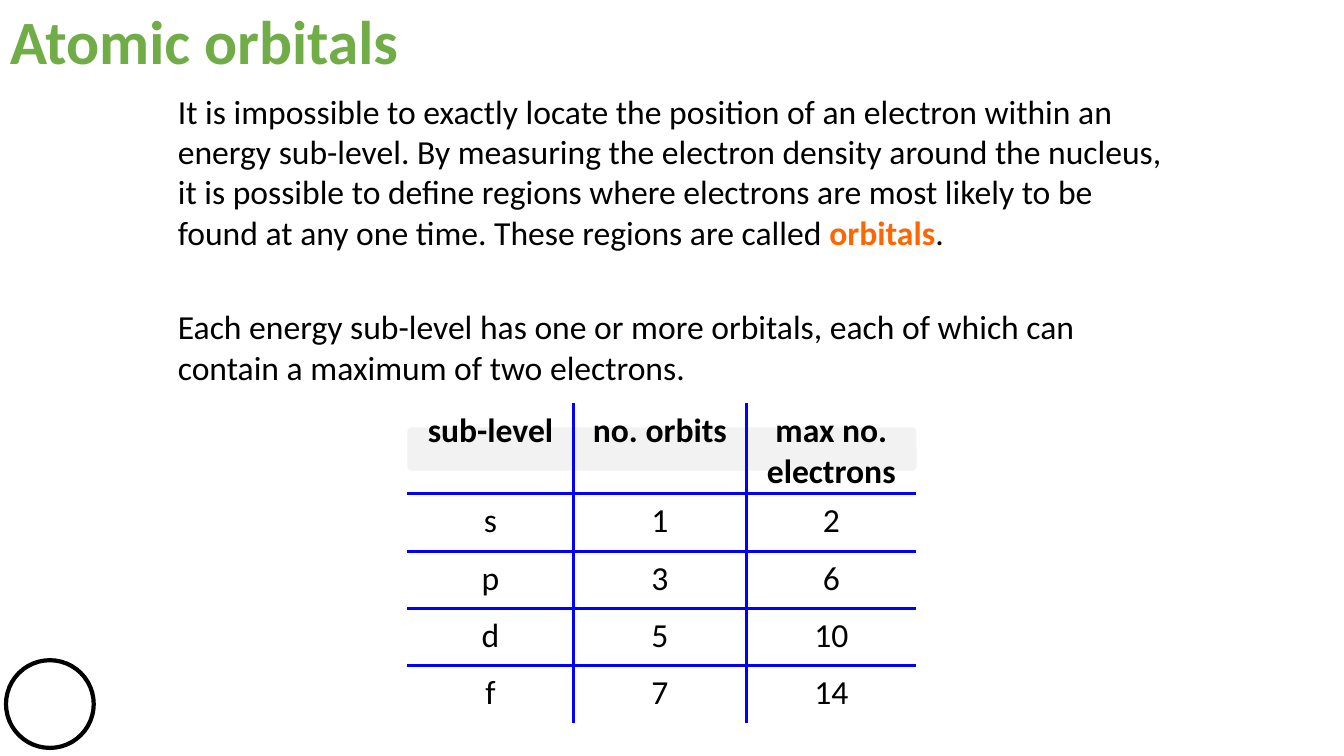
from dataclasses import dataclass
from itertools import accumulate

from lxml import etree
from pptx import Presentation
from pptx import util as u
from pptx.dml.color import RGBColor
from pptx.enum import shapes, text
from pptx.oxml import ns


@dataclass(frozen=True)
class Theme:
    """Colours, type sizes and line widths of the slide."""
    font: str = "Calibri"
    ink: str = "000000"
    paper: str = "FFFFFF"
    heading: str = "70AD47"
    accent: str = "FF6600"
    band: str = "F2F2F2"
    rule: str = "0000FF"
    title_size: int = 44
    body_size: int = 24
    rule_width: float = 2.25
    ring_width: float = 3


THEME = Theme()
WIDTH, HEIGHT = 13.33, 7.5
COLUMN_WIDTHS = (1.65, 1.71, 1.69)
ROWS = (
    ("sub-level", "no. orbits", "max no.\nelectrons"),
    ("s", "1", "2"),
    ("p", "3", "6"),
    ("d", "5", "10"),
    ("f", "7", "14"),
)
BODY_COUNT = len(ROWS) - 1
ROW_HEIGHTS = (0.9,) + (2.27 / BODY_COUNT,) * BODY_COUNT


def inches(*lengths):
    """Turn lengths in inches into slide units."""
    return [u.Inches(length) for length in lengths]


def write(paragraph, wording, size=THEME.body_size, color=THEME.ink, bold=False):
    """Append formatted text to a paragraph, breaking lines at newlines."""
    for index, line in enumerate(wording.split("\n")):
        if index:
            paragraph.add_line_break()
        run = paragraph.add_run()
        run.text = line
        run.font.name = THEME.font
        run.font.size = u.Pt(size)
        run.font.bold = bold
        run.font.color.rgb = RGBColor.from_string(color)


def text_box(slide, box):
    """Add a wrapping text box and return its frame."""
    frame = slide.shapes.add_textbox(*inches(*box)).text_frame
    frame.word_wrap = True
    return frame


def plain_shape(slide, kind, box, fill):
    """Add a filled shape with neither shadow nor outline."""
    shape = slide.shapes.add_shape(kind, *inches(*box))
    shape.shadow.inherit = False
    shape.fill.solid()
    shape.fill.fore_color.rgb = RGBColor.from_string(fill)
    shape.line.fill.background()
    return shape


def add_rule(slide, start_x, start_y, end_x, end_y):
    """Draw one table rule without a shadow."""
    rule = slide.shapes.add_connector(
        shapes.MSO_CONNECTOR.STRAIGHT, *inches(start_x, start_y, end_x, end_y))
    rule.line.color.rgb = RGBColor.from_string(THEME.rule)
    rule.line.width = u.Pt(THEME.rule_width)
    etree.SubElement(rule._element.spPr, ns.qn("a:effectLst"))


def add_title(slide, box):
    """Place the slide heading."""
    frame = text_box(slide, box)
    frame.vertical_anchor = text.MSO_ANCHOR.MIDDLE
    paragraph = frame.paragraphs[0]
    paragraph.line_spacing = 0.9
    write(paragraph, "Atomic orbitals", size=THEME.title_size,
          color=THEME.heading, bold=True)


def add_statement(slide, box, wording, key_term="", ending=""):
    """Place a body statement, with an optional highlighted term."""
    paragraph = text_box(slide, box).paragraphs[0]
    write(paragraph, wording)
    if key_term:
        write(paragraph, key_term, color=THEME.accent, bold=True)
        write(paragraph, ending)


def add_ring(slide, box):
    """Place the outlined circle in the corner."""
    ring = plain_shape(slide, shapes.MSO_SHAPE.OVAL, box, THEME.paper)
    ring.line.color.rgb = RGBColor.from_string(THEME.ink)
    ring.line.width = u.Pt(THEME.ring_width)


def clear_cell(cell):
    """Remove the borders and fill of a cell."""
    properties = cell._tc.get_or_add_tcPr()
    for side in "LRTB":
        border = etree.SubElement(properties, ns.qn(f"a:ln{side}"), w="0")
        etree.SubElement(border, ns.qn("a:noFill"))
    cell.fill.background()


def add_orbital_table(slide, left, top):
    """Place the sub-level table and its rules over the pale header band."""
    width, height = sum(COLUMN_WIDTHS), sum(ROW_HEIGHTS)
    band = plain_shape(slide, shapes.MSO_SHAPE.ROUNDED_RECTANGLE,
                       (left, top + 0.24, width, 0.43), THEME.band)
    band.adjustments[0] = 0.1

    for offset in accumulate(ROW_HEIGHTS[:-1]):
        add_rule(slide, left, top + offset, left + width, top + offset)
    for offset in accumulate(COLUMN_WIDTHS[:-1]):
        add_rule(slide, left + offset, top, left + offset, top + height)

    table = slide.shapes.add_table(
        len(ROWS), len(COLUMN_WIDTHS), *inches(left, top, width, height)).table
    table.first_row = table.horz_banding = False
    for column, column_width in zip(table.columns, COLUMN_WIDTHS):
        column.width = u.Inches(column_width)
    for row_index, values in enumerate(ROWS):
        is_header = row_index == 0
        row = table.rows[row_index]
        row.height = u.Inches(ROW_HEIGHTS[row_index])
        for cell, value in zip(row.cells, values):
            clear_cell(cell)
            cell.margin_top, cell.margin_bottom = inches(0.07, 0)
            paragraph = cell.text_frame.paragraphs[0]
            paragraph.alignment = text.PP_ALIGN.CENTER
            write(paragraph, value, bold=is_header)


def build_orbitals_slide(presentation):
    """Compose the atomic orbitals slide."""
    slide = presentation.slides.add_slide(presentation.slide_layouts[6])
    margin, measure = WIDTH / 8, WIDTH * 0.75
    add_ring(slide, (0.06, HEIGHT - 0.95, 0.87, 0.87))
    add_title(slide, (0, 0, measure, 0.89))
    add_statement(
        slide, (margin, 0.85, measure, 1.72),
        "It is impossible to exactly locate the position of an electron within "
        "an energy sub-level. By measuring the electron density around the "
        "nucleus, it is possible to define regions where electrons are most "
        "likely to be found at any one time. These regions are called ",
        key_term="orbitals", ending=".")
    add_statement(
        slide, (margin, 2.99, measure, 0.91),
        "Each energy sub-level has one or more orbitals, each of which can "
        "contain a maximum of two electrons.")
    add_orbital_table(slide, left=4.04, top=4)


def main():
    """Create and save the presentation."""
    presentation = Presentation()
    presentation.slide_width, presentation.slide_height = inches(WIDTH, HEIGHT)
    build_orbitals_slide(presentation)
    presentation.save("out.pptx")


if __name__ == "__main__":
    main()
